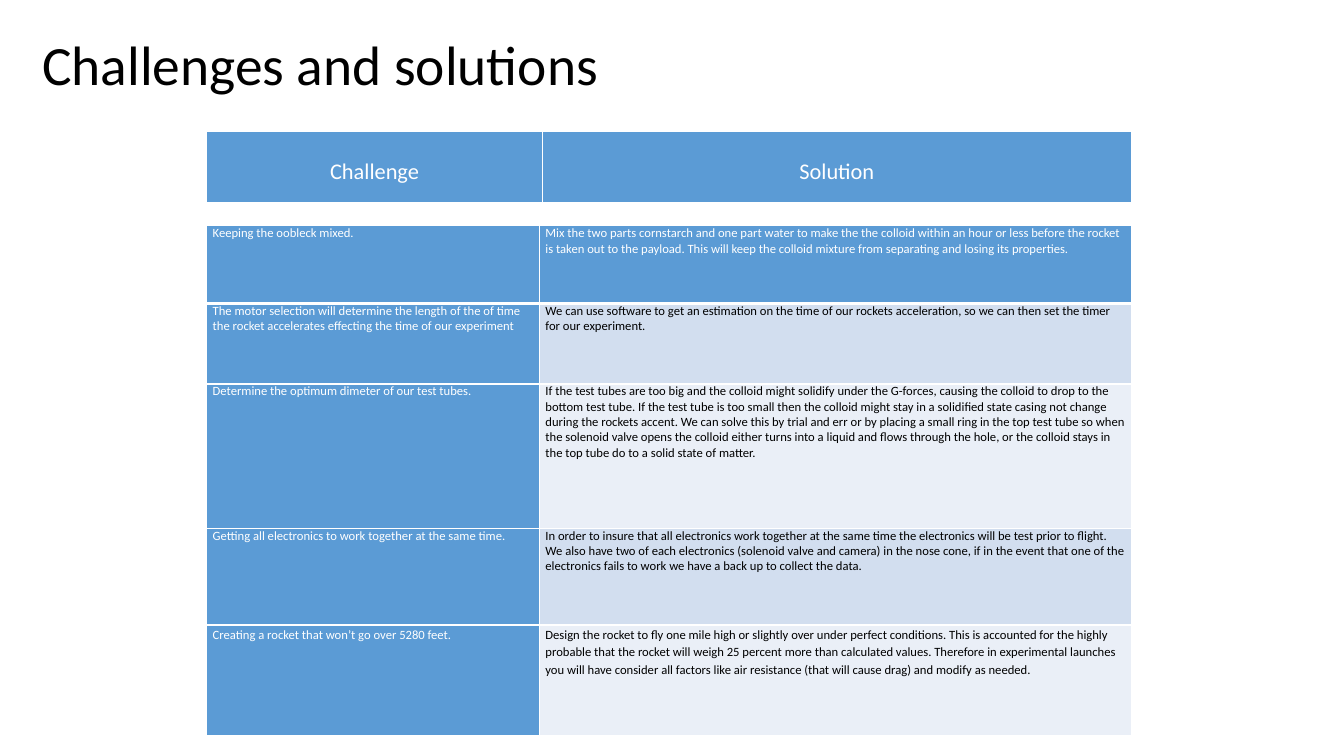
from lxml import etree
from pptx import Presentation
from pptx import util as u
from pptx.dml.color import RGBColor
from pptx.enum import text
from pptx.oxml import ns

# Content
TITLE = "Challenges and solutions"
HEADINGS = [("Challenge", "Solution")]
CHALLENGES = [
    ("Keeping the oobleck mixed.",
     "Mix the two parts cornstarch and one part water to make the the colloid within an hour or "
     "less before the rocket is taken out to the payload. This will keep the colloid mixture from "
     "separating and losing its properties."),
    ("The motor selection will determine the length of the of time the rocket accelerates "
     "effecting the time of our experiment",
     "We can use software to get an estimation on the time of our rockets acceleration, so we can "
     "then set the timer for our experiment."),
    ("Determine the optimum dimeter of our test tubes.",
     "If the test tubes are too big and the colloid might solidify under the G-forces, causing the "
     "colloid to drop to the bottom test tube. If the test tube is too small then the colloid "
     "might stay in a solidified state casing not change during the rockets accent. We can solve "
     "this by trial and err or by placing a small ring in the top test tube so when the solenoid "
     "valve opens the colloid either turns into a liquid and flows through the hole, or the "
     "colloid stays in the top tube do to a solid state of matter."),
    ("Getting all electronics to work together at the same time.",
     "In order to insure that all electronics work together at the same time the electronics will "
     "be test prior to flight. We also have two of each electronics (solenoid valve and camera) in "
     "the nose cone, if in the event that one of the electronics fails to work we have a back up "
     "to collect the data."),
    ("Creating a rocket that won’t go over 5280 feet.",
     "Design the rocket to fly one mile high or slightly over under perfect conditions. This is "
     "accounted for the highly probable that the rocket will weigh 25 percent more than calculated "
     "values. Therefore in experimental launches you will have consider all factors like air "
     "resistance (that will cause drag) and modify as needed."),
]

# Theme and grid, lengths in inches
THEME = {"font": "Calibri", "title": 39.6, "heading": 16, "body": 9,
         "black": "000000", "white": "FFFFFF", "blue": "5B9BD5",
         "bands": ("EAEFF7", "D2DEEF")}
SLIDE_W, SLIDE_H = 13.33, 7.5
TABLE_X, TABLE_W = 2.05, 9.17
HEADER = {"top": 1.3, "rows": [0.72], "first_col": 3.33, "size": THEME["heading"],
          "insets": (0.1, 0.27), "align": text.PP_ALIGN.CENTER}
BODY = {"top": 2.24, "rows": [0.77, 0.8, 1.43, 0.96, 1.1], "first_col": 3.3,
        "size": THEME["body"], "insets": (0.06, 0), "align": text.PP_ALIGN.LEFT}
LAST_ROW_SPACING = 1.15


def write(tf, words, size, color, **paragraph):
    p = tf.paragraphs[0]
    for name, value in paragraph.items():
        setattr(p, name, value)
    r = p.add_run()
    r.text = words
    for name, value in {"name": THEME["font"], "size": u.Pt(size), "bold": False}.items():
        setattr(r.font, name, value)
    r.font.color.rgb = RGBColor.from_string(color)


def set_borders(cell, bottom):
    tc_pr = cell._tc.get_or_add_tcPr()
    for i, side in enumerate("LRTB"):
        ln = etree.Element(ns.qn(f"a:ln{side}"), w=str(u.Pt(bottom if side == "B" else 1)))
        fill = etree.SubElement(ln, ns.qn("a:solidFill"))
        etree.SubElement(fill, ns.qn("a:srgbClr"), val=THEME["white"])
        tc_pr.insert(i, ln)


def add_table(s, rows, look):
    frame = s.shapes.add_table(len(rows), 2, u.Inches(TABLE_X), u.Inches(look["top"]),
                               u.Inches(TABLE_W), u.Inches(sum(look["rows"])))
    table = frame.table
    table.first_row = table.horz_banding = False
    for col, width in zip(table.columns, (look["first_col"], TABLE_W - look["first_col"])):
        col.width = u.Inches(width)
    side, top = map(u.Inches, look["insets"])
    for i, row in enumerate(rows):
        table.rows[i].height = u.Inches(look["rows"][i])
        for j, words in enumerate(row):
            cell = table.cell(i, j)
            banded = i > 0 and j > 0
            for name, value in {"margin_left": side, "margin_right": side,
                                "margin_top": top, "margin_bottom": 0}.items():
                setattr(cell, name, value)
            cell.fill.solid()
            cell.fill.fore_color.rgb = RGBColor.from_string(
                THEME["bands"][i % 2] if banded else THEME["blue"])
            set_borders(cell, 3 if i == 0 else 1)
            write(cell.text_frame, words, look["size"],
                  THEME["black" if banded else "white"], alignment=look["align"],
                  line_spacing=LAST_ROW_SPACING if i == 4 else 1.0)


def main():
    prs = Presentation()
    prs.slide_width, prs.slide_height = u.Inches(SLIDE_W), u.Inches(SLIDE_H)
    s = prs.slides.add_slide(prs.slide_layouts[6])

    # Title
    tf = s.shapes.add_textbox(*map(u.Inches, (0.32, 0.25, 12.42, 0.84))).text_frame
    for name, value in {"word_wrap": True, "vertical_anchor": text.MSO_ANCHOR.MIDDLE,
                        "margin_left": u.Inches(0.1), "margin_right": u.Inches(0.1),
                        "margin_top": u.Inches(0.1), "margin_bottom": u.Inches(0.1)}.items():
        setattr(tf, name, value)
    write(tf, TITLE, THEME["title"], THEME["black"], line_spacing=0.9)

    # Heading bar and challenge rows
    add_table(s, HEADINGS, HEADER)
    add_table(s, CHALLENGES, BODY)
    prs.save("out.pptx")


if __name__ == "__main__":
    main()
